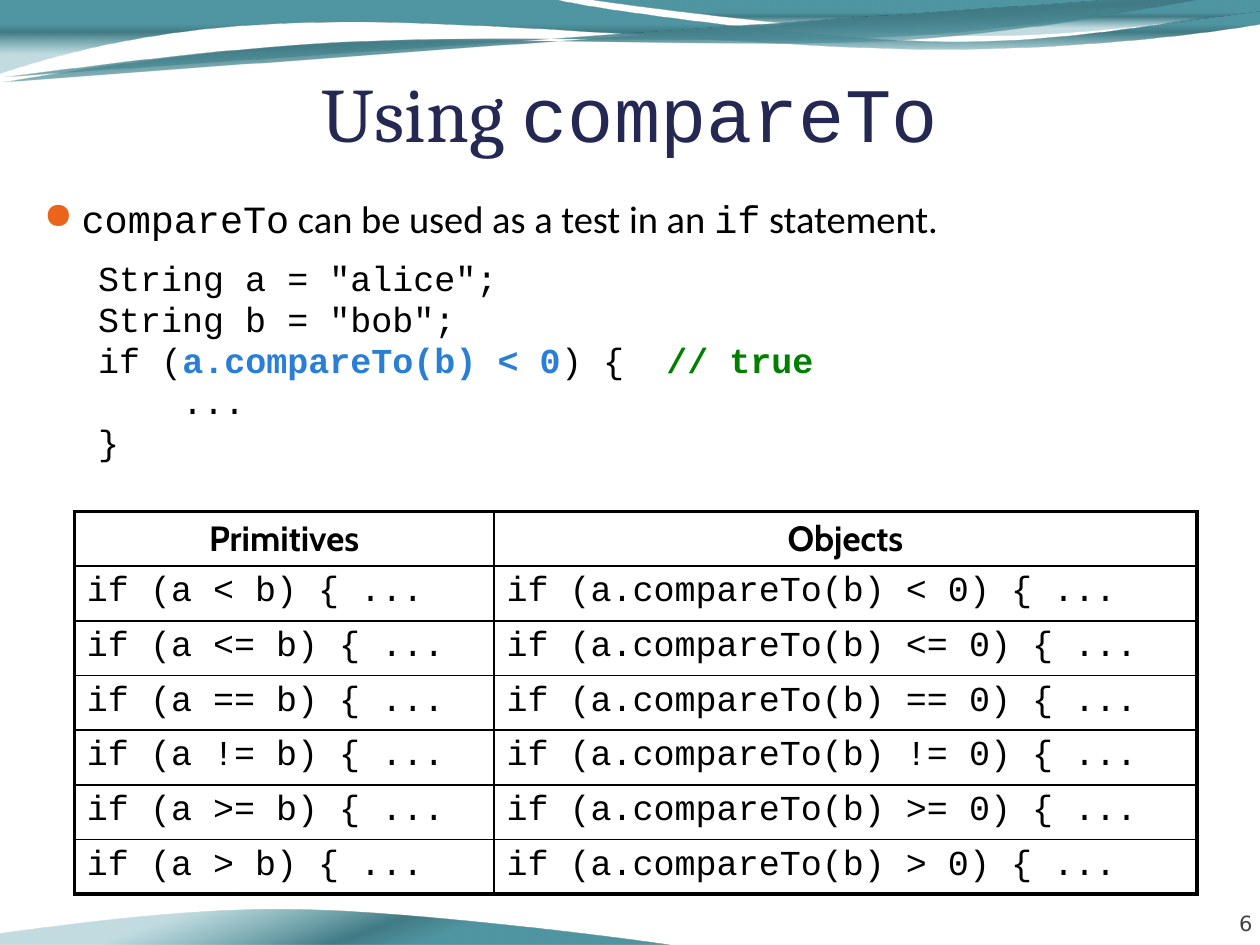
import math
from dataclasses import dataclass

import pptx
import pptx.dml.color
import pptx.enum.text
import pptx.oxml
import pptx.oxml.ns
import pptx.util
from pptx.util import Inches

COLORS = {
    "title": "242852", "text": "000000", "bullet": "EB641B", "number": "424242",
    "condition": "297FD5", "comment": "008000",
    "teal": "5096A2", "dark teal": "417B85", "light teal": "5AA2AE",
}
CODE, BODY, HEADING = "Courier New", "Calibri", "Cambria"
ALIGN = pptx.enum.text.PP_ALIGN
ANCHOR = pptx.enum.text.MSO_ANCHOR
NAMESPACE = pptx.oxml.ns.nsdecls("a")


@dataclass
class Ribbon:
    """A wave outline; a step has one point for a line, three for a curve."""
    start: tuple
    steps: list
    rotation: float = 0
    gradient_angle: int = 90
    closed: bool = True


RIBBONS = [
    Ribbon((0, 0), [
        [(4.4, 0)],
        [(4.76, 0.09), (6.64, 0.33), (7.58, 0.33)],
        [(8.53, 0.33), (9.58, 0.14), (10, 0.05)],
        [(10.01, 0.19)],
        [(9.83, 0.23), (8.7, 0.39), (7.46, 0.39)],
        [(6.22, 0.39), (3.82, 0.15), (2.57, 0.18)],
        [(1.29, 0.19), (0.46, 0.43), (-0.01, 0.58)],
        [(0, 0)],
    ]),
    Ribbon((4.67, 0), [
        [(4.98, 0.05), (6.74, 0.27), (7.63, 0.28)],
        [(8.52, 0.3), (9.61, 0.14), (10, 0.09)],
        [(10, 0)],
        [(4.67, 0)],
    ]),
    Ribbon((0.01, 0.65), [
        [(0.5, 0.57), (1.6, 0.39), (2.79, 0.34)],
        [(3.98, 0.28), (5.93, 0.39), (7.14, 0.32)],
        [(8.34, 0.25), (9.41, 0), (10, -0.08)],
    ], rotation=357.3, closed=False),
    Ribbon((0.01, 0.61), [
        [(0.49, 0.56), (1.66, 0.38), (2.85, 0.33)],
        [(4.04, 0.27), (5.97, 0.36), (7.16, 0.29)],
        [(8.36, 0.22), (9.41, -0.01), (10, -0.08)],
    ], rotation=357.3, closed=False),
    Ribbon((5.32, 7.5), [
        [(5.01, 7.45), (3.25, 7.23), (2.36, 7.22)],
        [(1.47, 7.2), (0.38, 7.36), (-0.01, 7.41)],
        [(-0.01, 7.5)],
        [(5.32, 7.5)],
    ], rotation=180, gradient_angle=70),
]


def rotate(point: tuple, degrees: float) -> tuple:
    x, y = point
    cos, sin = math.cos(math.radians(degrees)), math.sin(math.radians(degrees))
    return x * cos - y * sin, x * sin + y * cos


def turn_back(points: list, degrees: float) -> list:
    """Lay the outline flat so that turning it about its own middle restores it."""
    flat = [rotate(point, -degrees) for point in points]
    middle = tuple((min(axis) + max(axis)) / 2 for axis in zip(*flat))
    target = rotate(middle, degrees)
    return [(x - middle[0] + target[0], y - middle[1] + target[1]) for x, y in flat]


def bend_segments(shape, steps: list) -> None:
    """Join each three line segments that hold a curve's points into one curve."""
    lines = iter(list(shape.element.iter(pptx.oxml.ns.qn("a:lnTo"))))
    for step in steps:
        first, *others = [next(lines) for _ in step]
        if others:
            curve = pptx.oxml.parse_xml(f"<a:cubicBezTo {NAMESPACE}/>")
            first.addprevious(curve)
            for line in (first, *others):
                curve.append(line[0])
                line.getparent().remove(line)


def draw_ribbon(slide, ribbon: Ribbon) -> None:
    outline = [ribbon.start] + [point for step in ribbon.steps for point in step]
    points = [(Inches(x), Inches(y)) for x, y in turn_back(outline, ribbon.rotation)]
    builder = slide.shapes.build_freeform(*points[0])
    builder.add_line_segments(points[1:], close=ribbon.closed)
    shape = builder.convert_to_shape()
    bend_segments(shape, ribbon.steps)
    shape.rotation = ribbon.rotation
    shape.shadow.inherit = False
    shape.line.fill.background()
    gradient = pptx.oxml.parse_xml(
        f'<a:gradFill {NAMESPACE} rotWithShape="1"><a:gsLst>'
        f'<a:gs pos="33000"><a:srgbClr val="{COLORS["teal"]}"/></a:gs>'
        f'<a:gs pos="44000"><a:srgbClr val="{COLORS["dark teal"]}"/></a:gs>'
        f'<a:gs pos="74000"><a:srgbClr val="{COLORS["light teal"]}">'
        f'<a:alpha val="37000"/></a:srgbClr></a:gs></a:gsLst>'
        f'<a:lin ang="{ribbon.gradient_angle * 60000}" scaled="0"/></a:gradFill>')
    shape.element.spPr.find(pptx.oxml.ns.qn("a:custGeom")).addnext(gradient)


def add_span(para, text: str, *, font: str = CODE, size: float = 20,
             color: str = "text", bold: bool = False) -> None:
    span = para.add_run()
    span.text = text
    span.font.name = font
    span.font.size = pptx.util.Pt(size)
    span.font.bold = bold
    span.font.color.rgb = pptx.dml.color.RGBColor.from_string(COLORS[color])


def add_box(slide, left: float, top: float, width: float, height: float,
            insets: tuple = (0.1, 0.05, 0.1, 0.05), anchor=ANCHOR.TOP):
    frame = slide.shapes.add_textbox(
        Inches(left), Inches(top), Inches(width), Inches(height)).text_frame
    frame.word_wrap = True
    frame.vertical_anchor = anchor
    (frame.margin_left, frame.margin_top,
     frame.margin_right, frame.margin_bottom) = map(Inches, insets)
    return frame


def add_body(slide) -> None:
    frame = add_box(slide, 0.25, 1.5, 9.75, 5.67)
    para = frame.paragraphs[0]
    properties = para._p.get_or_add_pPr()
    properties.set("marL", str(Inches(0.3)))
    properties.set("indent", str(Inches(-0.3)))
    for bullet_part in (
            f'<a:buClr {NAMESPACE}><a:srgbClr val="{COLORS["bullet"]}"/></a:buClr>',
            f'<a:buSzPct {NAMESPACE} val="95000"/>',
            f'<a:buFont {NAMESPACE} typeface="OpenSymbol"/>',
            f'<a:buChar {NAMESPACE} char="●"/>'):
        properties.append(pptx.oxml.parse_xml(bullet_part))
    for text, font in (("compareTo", CODE), (" can be used as a test in an ", BODY),
                       ("if", CODE), (" statement.", BODY)):
        add_span(para, text, font=font, size=22)

    code_lines = [
        [("String a = \"alice\";", {})],
        [("String b = \"bob\";", {})],
        [("if (", {}), ("a.compareTo(b) < 0", {"color": "condition", "bold": True}),
         (") {  ", {}), ("// true", {"color": "comment", "bold": True})],
        [("    ...", {})],
        [("}", {})],
    ]
    for index, spans in enumerate(code_lines):
        para = frame.add_paragraph()
        para._p.get_or_add_pPr().set("marL", str(Inches(0.43)))
        para.line_spacing = 0.8
        para.space_before = pptx.util.Pt(4.2 if index else 13.2)
        for text, style in spans:
            add_span(para, text, **style)


def set_borders(cell, widths: dict) -> None:
    properties = cell._tc.get_or_add_tcPr()
    for side, width in widths.items():
        properties.append(pptx.oxml.parse_xml(
            f'<a:ln{side} {NAMESPACE} w="{pptx.util.Pt(width)}"><a:solidFill>'
            f'<a:srgbClr val="{COLORS["text"]}"/></a:solidFill></a:ln{side}>'))


def add_comparison_table(slide) -> None:
    operators = ["<", "<=", "==", "!=", ">=", ">"]
    rows = [("Primitives", "Objects")] + [
        (f"if (a {sign} b) {{ ...", f"if (a.compareTo(b) {sign} 0) {{ ...")
        for sign in operators]
    table = slide.shapes.add_table(
        len(rows), 2, Inches(0.59), Inches(4.06), Inches(8.91), Inches(3.03)).table
    table.first_row = table.horz_banding = False
    for column, width in zip(table.columns, (3.33, 5.58)):
        column.width = Inches(width)
    outer, inner = 2.25, 1
    for row, texts in enumerate(rows):
        for column, text in enumerate(texts):
            cell = table.cell(row, column)
            set_borders(cell, {
                "L": outer if column == 0 else inner,
                "R": outer if column == 1 else inner,
                "T": outer if row == 0 else inner,
                "B": outer if row == len(rows) - 1 else inner})
            cell.fill.background()
            para = cell.text_frame.paragraphs[0]
            header = row == 0
            para.alignment = ALIGN.CENTER if header else ALIGN.LEFT
            add_span(para, text, font="Cabin" if header else CODE, bold=header)


def main() -> None:
    deck = pptx.Presentation()
    deck.slide_width, deck.slide_height = Inches(10), Inches(7.5)
    page = deck.slides.add_slide(deck.slide_layouts[6])
    for ribbon in RIBBONS:
        draw_ribbon(page, ribbon)

    number = add_box(page, 9.11, 7.03, 0.83, 0.4, (0, 0, 0, 0), ANCHOR.BOTTOM).paragraphs[0]
    number.alignment = ALIGN.RIGHT
    add_span(number, "6", font="DejaVu Sans", size=12, color="number")

    title = add_box(page, 0.5, 0.48, 9, 0.77, (0, 0.05, 0, 0), ANCHOR.BOTTOM).paragraphs[0]
    title.alignment = ALIGN.CENTER
    add_span(title, "Using ", font=HEADING, size=44, color="title")
    add_span(title, "compareTo", size=44, color="title")

    add_body(page)
    add_comparison_table(page)
    deck.save("out.pptx")


if __name__ == "__main__":
    main()
